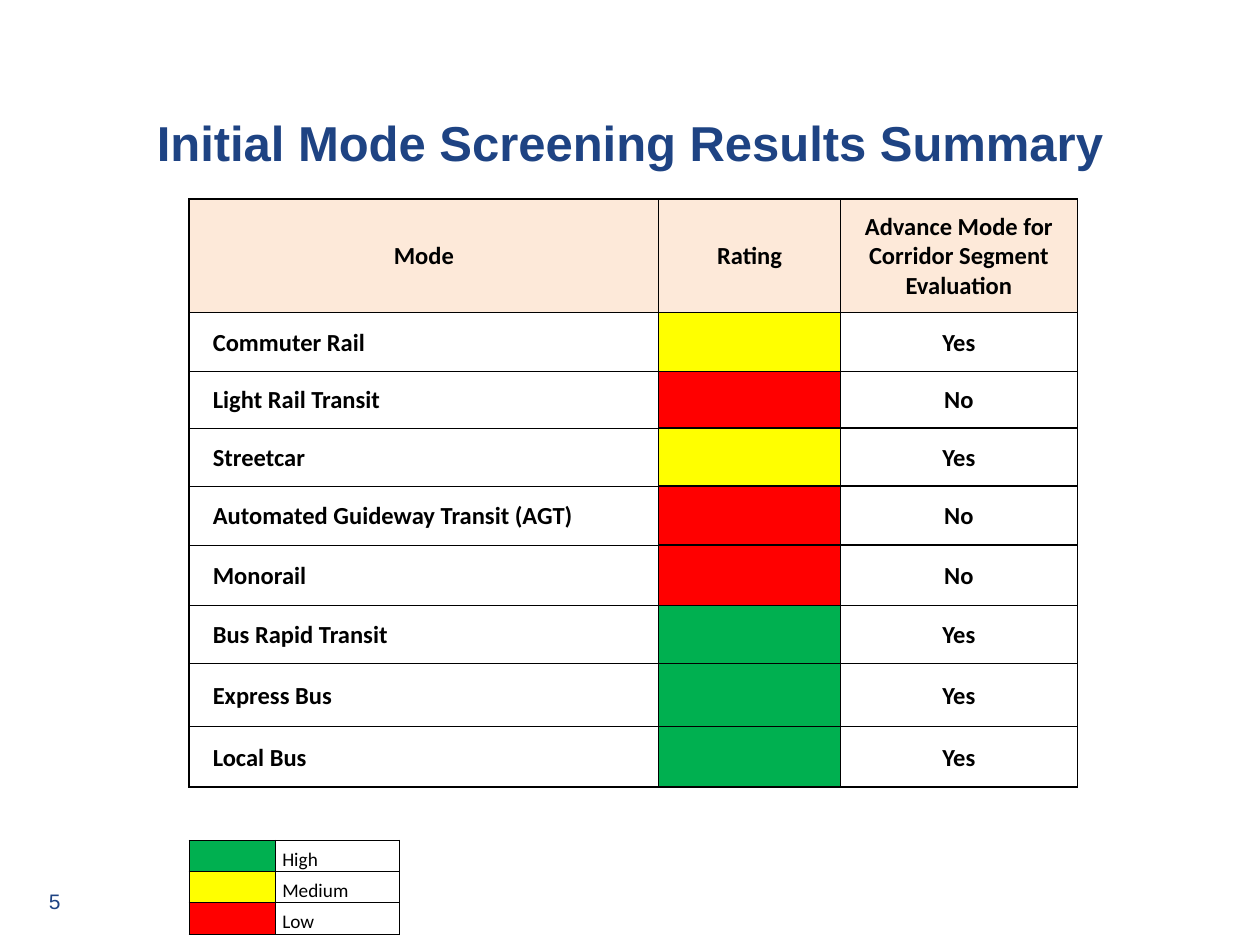
"""Build the mode screening results slide with its rating table and legend."""
from lxml import etree
from pptx import Presentation
from pptx import util as u
from pptx.dml.color import RGBColor
from pptx.enum import text
from pptx.oxml.ns import qn

NAVY = RGBColor(0x1E, 0x43, 0x83)
BLACK = RGBColor(0, 0, 0)
WHITE = RGBColor(255, 255, 255)
PEACH = RGBColor(0xFD, 0xE9, 0xD9)
GREEN = RGBColor(0, 0xB0, 0x50)
YELLOW = RGBColor(255, 255, 0)
RED = RGBColor(255, 0, 0)

TITLE = "Initial Mode Screening Results Summary"
PAGE = "5"
HEADER = ("Mode", "Rating", "Advance Mode for Corridor Segment Evaluation")
MODES = [
    ("Commuter Rail", YELLOW, "Yes"),
    ("Light Rail Transit", RED, "No"),
    ("Streetcar", YELLOW, "Yes"),
    ("Automated Guideway Transit (AGT)", RED, "No"),
    ("Monorail", RED, "No"),
    ("Bus Rapid Transit", GREEN, "Yes"),
    ("Express Bus", GREEN, "Yes"),
    ("Local Bus", GREEN, "Yes"),
]
LEGEND = [(GREEN, "High"), (YELLOW, "Medium"), (RED, "Low")]
MODE_COLS = (9.47, 3.66, 4.78)
MODE_ROWS = (2.29, 1.19, 1.14, 1.17, 1.19, 1.22, 1.17, 1.27, 1.22)
LEGEND_COLS = (1.75, 2.49)
LEFT = 3.81
CENTER, RIGHT = text.PP_ALIGN.CENTER, text.PP_ALIGN.RIGHT
MIDDLE, BOTTOM = text.MSO_ANCHOR.MIDDLE, text.MSO_ANCHOR.BOTTOM


def put(tf, words, size=14, font="Calibri", color=BLACK, bold=False, align=None, spacing=None):
    p = tf.paragraphs[0]
    p.alignment = align
    if spacing:
        p.line_spacing = u.Pt(spacing)
    if not words:
        p._p.get_or_add_endParaRPr().set("sz", str(size * 100))
        return
    r = p.add_run()
    r.text = words
    r.font.size, r.font.name, r.font.bold = u.Pt(size), font, bold
    r.font.color.rgb = color


def add_box(s, words, at, anchor=text.MSO_ANCHOR.TOP, **fmt):
    tf = s.shapes.add_textbox(*map(u.Cm, at)).text_frame
    tf.word_wrap = True
    tf.vertical_anchor = anchor
    put(tf, words, font="Arial", color=NAVY, **fmt)


def add_grid(s, top, cols, rows):
    frame = s.shapes.add_table(len(rows), len(cols), u.Cm(LEFT), u.Cm(top),
                               u.Cm(sum(cols)), u.Cm(sum(rows)))
    table = frame.table
    table.first_row = table.horz_banding = False
    for col, width in zip(table.columns, cols):
        col.width = u.Cm(width)
    for row, height in zip(table.rows, rows):
        row.height = u.Cm(height)
    return table


def style_cell(cell, words, fill, borders, anchor=MIDDLE, inset=0.03, right=0.03, **fmt):
    cell.margin_left, cell.margin_right = u.Cm(inset), u.Cm(right)
    cell.margin_top, cell.margin_bottom = u.Cm(0.03), 0
    cell.vertical_anchor = anchor
    for side, width in zip("LRTB", borders):
        ln = etree.SubElement(cell._tc.get_or_add_tcPr(), qn(f"a:ln{side}"), w=str(u.Pt(width)))
        solid = etree.SubElement(ln, qn("a:solidFill"))
        etree.SubElement(solid, qn("a:srgbClr"), val=str(BLACK))
    cell.fill.solid()
    cell.fill.fore_color.rgb = fill
    put(cell.text_frame, words, **fmt)


def fill_modes(table):
    last = len(MODES)
    for i, (mode, rating, advance) in enumerate([(HEADER[0], PEACH, HEADER[2])] + MODES):
        head = i == 0
        fill = PEACH if head else WHITE
        top = 1 if i < 2 else 0.5
        bottom = 1 if i in (0, last) else 0.5
        style_cell(table.cell(i, 0), mode, fill, (1, 0.5, top, bottom), bold=True,
                   inset=0.03 if head else 0.48, align=CENTER if head else None)
        style_cell(table.cell(i, 1), HEADER[1] if head else "", rating, (0.5, 1, 1, 1),
                   bold=True, align=CENTER)
        style_cell(table.cell(i, 2), advance, fill, (1, 1, 1, 1), bold=True, align=CENTER)


def fill_legend(table):
    for i, (color, label) in enumerate(LEGEND):
        for j, (words, fill) in enumerate([("", color), (label, WHITE)]):
            style_cell(table.cell(i, j), words, fill, (0.5,) * 4, anchor=BOTTOM,
                       inset=0.13, right=0.13, size=11)


def main():
    prs = Presentation()
    prs.slide_width, prs.slide_height = u.Cm(25.4), u.Cm(19.05)
    s = prs.slides.add_slide(prs.slide_layouts[6])
    add_box(s, PAGE, (0.2, 17.78, 1.27, 0.76), anchor=MIDDLE, size=12, align=RIGHT)
    add_box(s, TITLE, (0, 2.34, 25.4, 1.47), size=28, bold=True, align=CENTER, spacing=28)
    fill_legend(add_grid(s, 16.94, LEGEND_COLS, [0.63] * len(LEGEND)))
    fill_modes(add_grid(s, 4.01, MODE_COLS, MODE_ROWS))
    prs.save("out.pptx")


if __name__ == "__main__":
    main()
